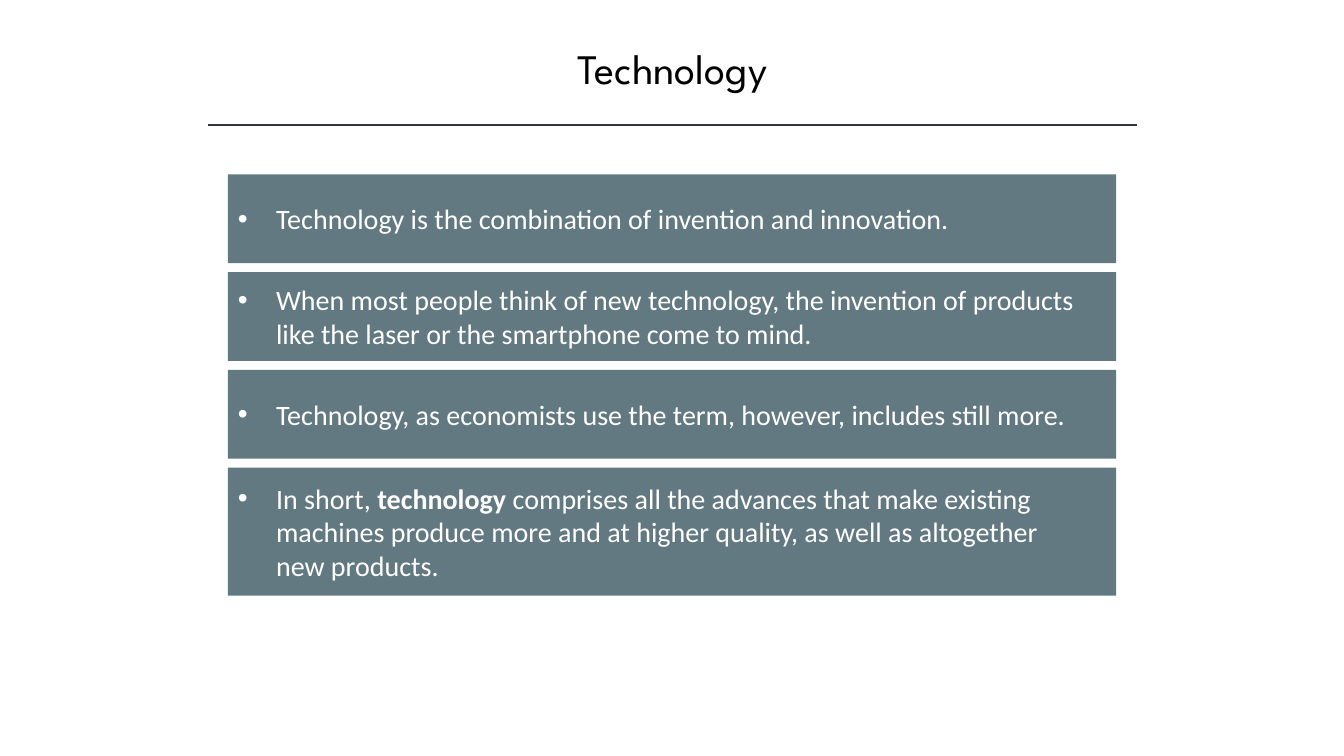
import pptx
import pptx.util
import pptx.dml.color
import pptx.enum.shapes
import pptx.enum.text
from lxml import etree
from pptx.oxml.ns import qn

Inches, Pt = pptx.util.Inches, pptx.util.Pt
ALIGN = pptx.enum.text.PP_ALIGN
ANCHOR = pptx.enum.text.MSO_ANCHOR

TITLE = "Technology"
# Each card: height, then runs of (text, bold)
CARDS = [
    (0.88, [("Technology is the combination of invention and innovation.", False)]),
    (0.88, [("When most people think of new technology, the invention of products "
             "like the laser or the smartphone come to mind.", False)]),
    (0.88, [("Technology, as economists use the term, however, includes still more.",
             False)]),
    (1.27, [("In short, ", False), ("technology", True),
            (" comprises all the advances that make existing machines produce more "
             "and at higher quality, as well as altogether new products.", False)]),
]
LEFT, TOP, WIDTH, GAP = 2.26, 1.73, 8.81, 0.09
INDENT = 0.38


def color(code):
    return pptx.dml.color.RGBColor.from_string(code)


def write(shape, runs, size, font, ink, align=ALIGN.LEFT, anchor=ANCHOR.TOP,
          right=0.1, bullet=False):
    frame = shape.text_frame
    frame.word_wrap = True
    frame.vertical_anchor = anchor
    frame.margin_right = Inches(right)
    para = frame.paragraphs[0]
    para.alignment = align
    if bullet:
        props = para._p.get_or_add_pPr()
        props.set("marL", str(Inches(INDENT)))
        props.set("indent", str(-Inches(INDENT)))
        etree.SubElement(props, qn("a:buFont")).set("typeface", "Arial")
        etree.SubElement(props, qn("a:buChar")).set("char", "•")
    for text, bold in runs:
        run = para.add_run()
        run.text = text
        run.font.size = Pt(size)
        run.font.name = font
        run.font.bold = bold
        run.font.color.rgb = color(ink)


deck = pptx.Presentation()
deck.slide_width, deck.slide_height = Inches(13.33), Inches(7.5)
slide = deck.slides.add_slide(deck.slide_layouts[6])
shapes = slide.shapes

rule = shapes.add_connector(pptx.enum.shapes.MSO_CONNECTOR.STRAIGHT,
                            Inches(2.06), Inches(1.24), Inches(11.28), Inches(1.24))
rule.line.color.rgb = color("323542")
rule.line.width = Pt(1)
etree.SubElement(rule._element.spPr, qn("a:effectLst"))

title = shapes.add_textbox(Inches(1.67), Inches(0.37), Inches(10), Inches(0.61))
write(title, [(TITLE, False)], 30, "League Spartan", "000000", align=ALIGN.CENTER)

top = TOP
for height, runs in CARDS:
    card = shapes.add_shape(pptx.enum.shapes.MSO_SHAPE.RECTANGLE, Inches(LEFT),
                            Inches(top), Inches(WIDTH), Inches(height))
    card.shadow.inherit = False
    card.fill.solid()
    card.fill.fore_color.rgb = color("627981")
    card.line.fill.background()
    write(card, runs, 20, "Calibri", "FFFFFF", anchor=ANCHOR.MIDDLE,
          right=0.37, bullet=True)
    top += height + GAP

deck.save("out.pptx")
